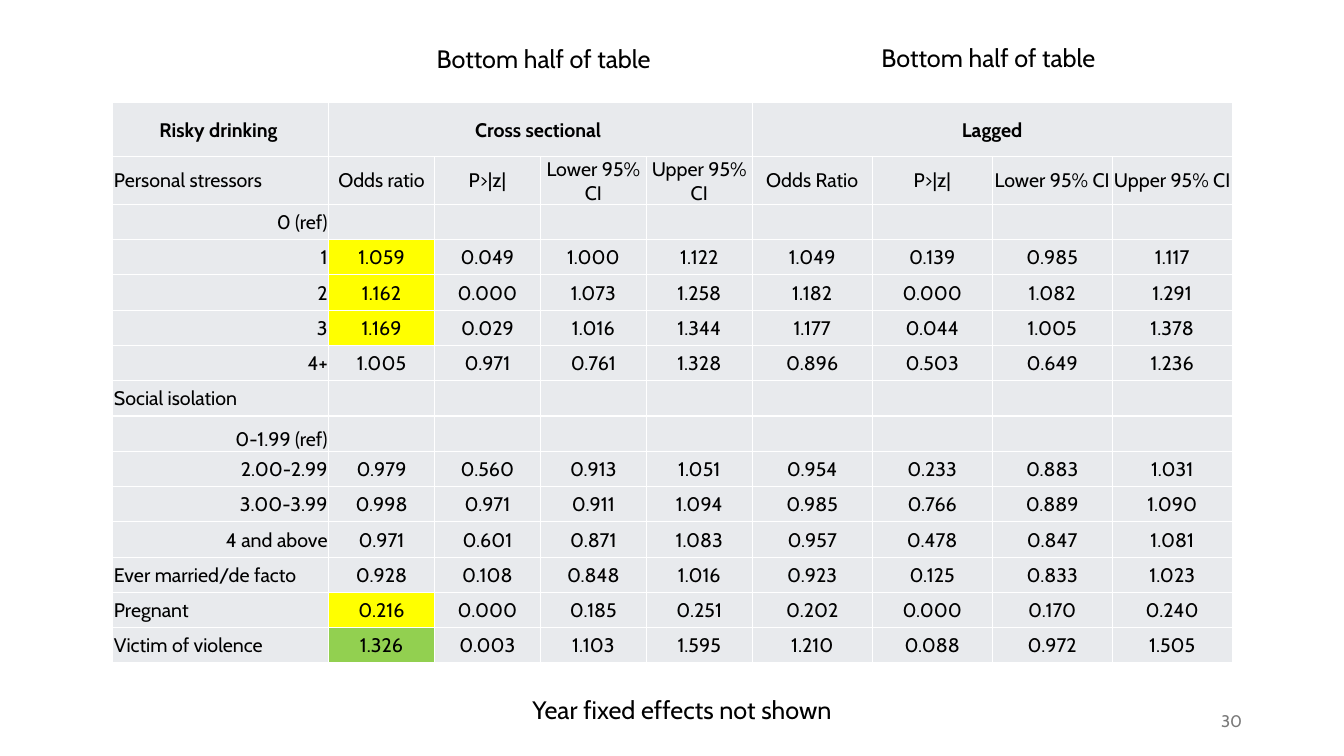
from dataclasses import dataclass

from lxml.etree import SubElement
from pptx import Presentation
from pptx.dml.color import RGBColor
from pptx.enum.text import MSO_ANCHOR, MSO_AUTO_SIZE, PP_ALIGN
from pptx.oxml.ns import qn
from pptx.table import _Cell
from pptx.text.text import _Paragraph
from pptx.util import Inches, Pt

SLIDE_WIDTH, SLIDE_HEIGHT = Inches(13.33), Inches(7.5)
FONT = "Cabin"
COLOURS = {
    "text": "000000",
    "page number": "797979",
    "cell": "E8EAED",
    "border": "FFFFFF",
    "yellow": "FFFF00",
    "green": "92D050",
}
LEFT, CENTRE, RIGHT = PP_ALIGN.LEFT, PP_ALIGN.CENTER, PP_ALIGN.RIGHT
CELL_SIZE = 14
CELL_FORMAT = {
    "margin_left": Inches(0.01),
    "margin_right": Inches(0.01),
    "margin_top": Inches(0.01),
    "margin_bottom": 0,
}


@dataclass
class Caption:
    """A line of text; its place is in percent of the slide's size."""
    text: str
    left: float
    top: float
    width: float
    height: float = 5.33
    size: int = 18
    colour: str = "text"
    align: PP_ALIGN = CENTRE
    anchor: MSO_ANCHOR = MSO_ANCHOR.TOP
    auto_size: MSO_AUTO_SIZE = MSO_AUTO_SIZE.SHAPE_TO_FIT_TEXT


@dataclass
class Row:
    """A row label with its figures, cross sectional ones first."""
    label: str
    figures: str = ""
    align: PP_ALIGN = RIGHT
    highlight: str = "cell"
    anchor: MSO_ANCHOR = MSO_ANCHOR.MIDDLE


CAPTIONS = [
    Caption("Year fixed effects not shown", 13.05, 91.2, 75.39),
    Caption("30", 70.67, 92.67, 22.5, size=12, colour="page number", align=RIGHT,
            anchor=MSO_ANCHOR.MIDDLE, auto_size=MSO_AUTO_SIZE.NONE),
    Caption("Bottom half of table ", 28.13, 5.07, 25.06),
    Caption("Bottom half of table ", 61.22, 4.93, 25.06),
]

TABLE_LEFT, TABLE_TOP = 8.4, 13.6
COLUMN_WIDTHS = [16.05] + [7.88] * 4 + [8.93] * 4
HEADER_HEIGHT, ROW_HEIGHT = 7.07, 4.67
GROUPS = {0: "Risky drinking ", 1: "Cross sectional ", 5: "Lagged"}
GROUP_SPAN = 4
MEASURES = ["Odds ratio", "P>|z|", "Lower 95% CI", "Upper 95% CI",
            "Odds Ratio", "P>|z|", "Lower 95% CI", "Upper 95% CI"]
ROWS = [
    Row("0 (ref)"),
    Row("1", "1.059 0.049 1.000 1.122 1.049 0.139 0.985 1.117", highlight="yellow"),
    Row("2", "1.162 0.000 1.073 1.258 1.182 0.000 1.082 1.291", highlight="yellow"),
    Row("3", "1.169 0.029 1.016 1.344 1.177 0.044 1.005 1.378", highlight="yellow"),
    Row("4+", "1.005 0.971 0.761 1.328 0.896 0.503 0.649 1.236"),
    Row("Social isolation", align=LEFT),
    Row("0-1.99 (ref)", anchor=MSO_ANCHOR.BOTTOM),
    Row("2.00-2.99", "0.979 0.560 0.913 1.051 0.954 0.233 0.883 1.031"),
    Row("3.00-3.99", "0.998 0.971 0.911 1.094 0.985 0.766 0.889 1.090"),
    Row("4 and above", "0.971 0.601 0.871 1.083 0.957 0.478 0.847 1.081"),
    Row("Ever married/de facto", "0.928 0.108 0.848 1.016 0.923 0.125 0.833 1.023", LEFT),
    Row("Pregnant", "0.216 0.000 0.185 0.251 0.202 0.000 0.170 0.240", LEFT, "yellow"),
    Row("Victim of violence", "1.326 0.003 1.103 1.595 1.210 0.088 0.972 1.505", LEFT, "green"),
]


def across(percent: float) -> int:
    return round(SLIDE_WIDTH * percent / 100)


def down(percent: float) -> int:
    return round(SLIDE_HEIGHT * percent / 100)


def write(para: _Paragraph, text: str, size: int, colour: str, align: PP_ALIGN,
          bold: bool = False) -> None:
    para.alignment = align
    span = para.add_run()
    span.text = text
    for name, value in {"name": FONT, "size": Pt(size), "bold": bold}.items():
        setattr(span.font, name, value)
    span.font.color.rgb = RGBColor.from_string(COLOURS[colour])


def add_caption(page, caption: Caption) -> None:
    box = page.shapes.add_textbox(across(caption.left), down(caption.top),
                                  across(caption.width), down(caption.height))
    frame = box.text_frame
    frame_format = {"word_wrap": True, "vertical_anchor": caption.anchor,
                    "auto_size": caption.auto_size}
    for name, value in frame_format.items():
        setattr(frame, name, value)
    write(frame.paragraphs[0], caption.text, caption.size, caption.colour, caption.align)


def add_borders(cell: _Cell) -> None:
    properties = cell._tc.get_or_add_tcPr()
    for side in ("a:lnL", "a:lnR", "a:lnT", "a:lnB"):
        line = SubElement(properties, qn(side), w=str(Pt(1)))
        fill = SubElement(line, qn("a:solidFill"))
        SubElement(fill, qn("a:srgbClr"), val=COLOURS["border"])


def fill_cell(cell: _Cell, text: str, align: PP_ALIGN = CENTRE, fill: str = "cell",
              anchor: MSO_ANCHOR = MSO_ANCHOR.MIDDLE, bold: bool = False) -> None:
    for name, value in {**CELL_FORMAT, "vertical_anchor": anchor}.items():
        setattr(cell, name, value)
    add_borders(cell)
    cell.fill.solid()
    cell.fill.fore_color.rgb = RGBColor.from_string(COLOURS[fill])
    para = cell.text_frame.paragraphs[0]
    if text:
        write(para, text, CELL_SIZE, "text", align, bold)
    else:
        SubElement(para._p, qn("a:endParaRPr"), sz=str(CELL_SIZE * 100))


def add_results_table(page) -> None:
    heights = [HEADER_HEIGHT] + [ROW_HEIGHT] * (len(ROWS) + 1)
    frame = page.shapes.add_table(len(heights), len(COLUMN_WIDTHS),
                                  across(TABLE_LEFT), down(TABLE_TOP),
                                  across(sum(COLUMN_WIDTHS)), down(sum(heights)))
    table = frame.table
    for column, width in zip(table.columns, COLUMN_WIDTHS):
        column.width = across(width)
    for table_row, height in zip(table.rows, heights):
        table_row.height = down(height)

    for index in range(len(COLUMN_WIDTHS)):
        fill_cell(table.cell(0, index), GROUPS.get(index, ""), bold=True)
    for start in list(GROUPS)[1:]:
        table.cell(0, start).merge(table.cell(0, start + GROUP_SPAN - 1))

    fill_cell(table.cell(1, 0), "Personal stressors", LEFT)
    for index, measure in enumerate(MEASURES, 1):
        fill_cell(table.cell(1, index), measure)

    for row_index, row in enumerate(ROWS, 2):
        fill_cell(table.cell(row_index, 0), row.label, row.align, anchor=row.anchor)
        figures = row.figures.split() or [""] * len(MEASURES)
        for index, figure in enumerate(figures, 1):
            fill = row.highlight if index == 1 else "cell"
            fill_cell(table.cell(row_index, index), figure, fill=fill)


def main() -> None:
    deck = Presentation()
    deck.slide_width, deck.slide_height = SLIDE_WIDTH, SLIDE_HEIGHT
    page = deck.slides.add_slide(deck.slide_layouts[6])
    for caption in CAPTIONS:
        add_caption(page, caption)
    add_results_table(page)
    deck.save("out.pptx")


if __name__ == "__main__":
    main()
